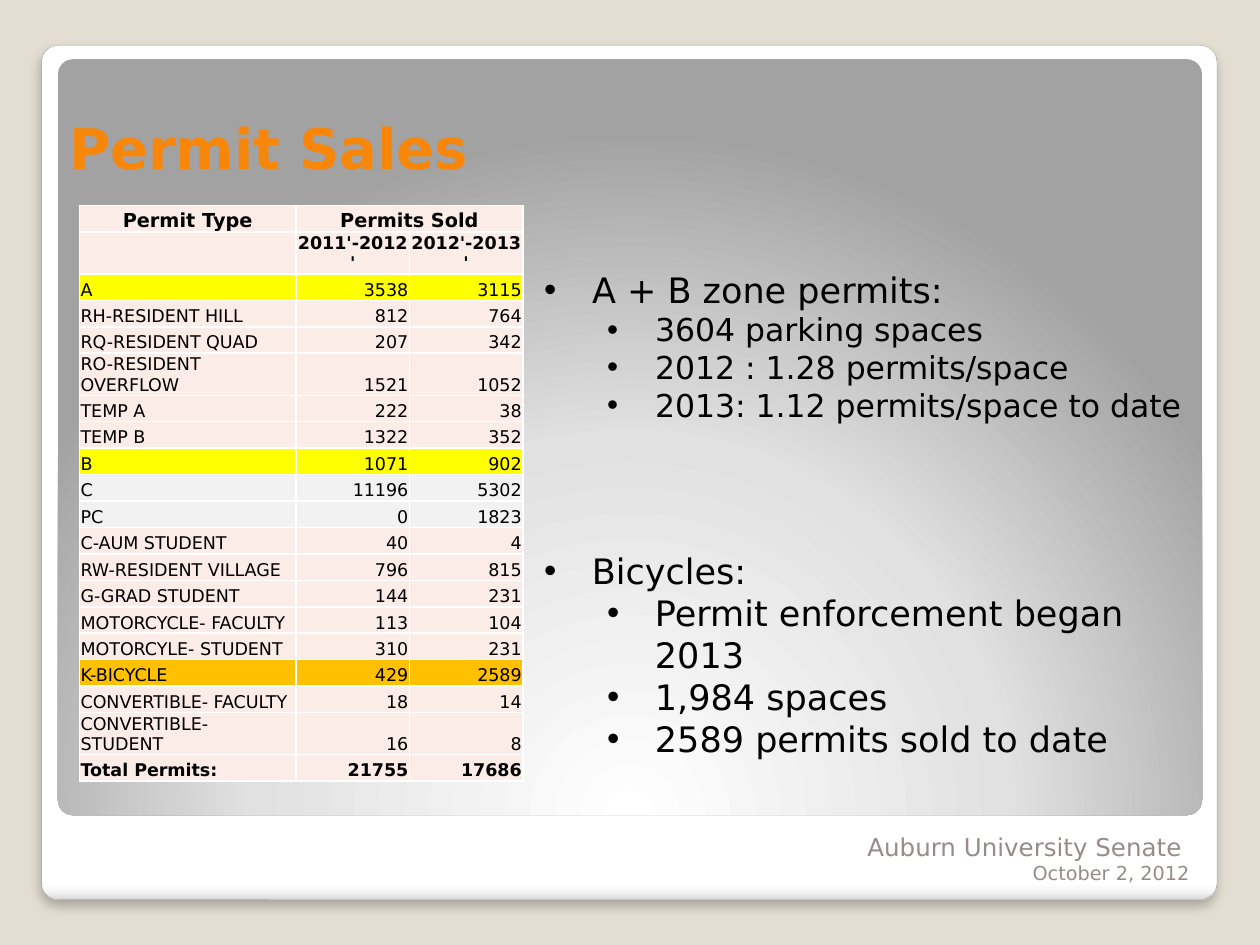
from dataclasses import dataclass

from pptx import Presentation
from pptx.dml.color import RGBColor
from pptx.enum.shapes import MSO_SHAPE
from pptx.enum.text import MSO_ANCHOR, MSO_AUTO_SIZE, PP_ALIGN
from pptx.oxml import parse_xml
from pptx.oxml.ns import nsdecls
from pptx.util import Inches, Pt

LEFT, CENTER, RIGHT = PP_ALIGN.LEFT, PP_ALIGN.CENTER, PP_ALIGN.RIGHT
TOP, BOTTOM = MSO_ANCHOR.TOP, MSO_ANCHOR.BOTTOM
ROUNDED = MSO_SHAPE.ROUNDED_RECTANGLE
GROW = MSO_AUTO_SIZE.SHAPE_TO_FIT_TEXT
FONT = "DejaVu Sans"
COLORS = {
    "page": "E3DED1", "frame": "A4A4A4", "title": "F78609", "footer": "968C8C",
    "text": "000000", "border": "FFFFFF", "plain": "FCECE7", "zone": "FFFF00",
    "commuter": "F2F2F2", "bicycle": "FFC000",
}


@dataclass
class Panel:
    place: tuple
    stops: list
    direction: str


@dataclass
class Line:
    text: str
    size: float
    color: str = "text"
    bold: bool = False
    align: PP_ALIGN = LEFT
    spacing: float = None
    level: int = None  # None means no bullet


@dataclass
class TextBlock:
    place: tuple
    lines: list
    anchor: MSO_ANCHOR = TOP
    grow: bool = False


@dataclass
class PermitRow:
    cells: tuple
    fill: str = "plain"
    size: float = 10
    bold: bool = False
    aligns: tuple = (LEFT, RIGHT, RIGHT)


PANELS = [
    Panel((0.33, 0.36, 9.33, 6.78),
          [(0, "FFFFFF"), (98, "FFFFFF"), (99, "F7F7F7"), (100, "DADADA")],
          '<a:lin ang="5400000" scaled="0"/>'),
    Panel((0.46, 0.47, 9.08, 6), [(0, "FFFFFF"), (55, "E1E1E1"), (100, "A2A2A2")],
          '<a:path path="circle"><a:fillToRect l="50000" t="175000" r="50000" b="-75000"/></a:path>'),
]

TEXT_BLOCKS = [
    TextBlock((5.21, 6.54, 4.33, 0.42),
              [Line("Auburn University Senate ", 14, "footer", align=RIGHT, spacing=18)]),
    TextBlock((6.75, 6.72, 2.79, 0.42),
              [Line("October 2, 2012", 11, "footer", align=RIGHT, spacing=18)]),
    TextBlock((0.45, 0.23, 9, 1.25), [Line("Permit Sales", 32, "title", True)], BOTTOM),
    TextBlock((4.22, 4.31, 5.23, 1.78), [
        Line("Bicycles:", 20, level=0),
        Line("Permit enforcement began 2013", 20, level=1),
        Line("1,984 spaces", 20, level=1),
        Line("2589 permits sold to date", 20, level=1),
    ], grow=True),
    TextBlock((4.22, 2.08, 5.48, 1.35), [
        Line("A + B zone permits:", 20, level=0),
        Line("3604 parking spaces", 18, level=1),
        Line("2012 : 1.28 permits/space", 18, level=1),
        Line("2013: 1.12 permits/space to date", 18, level=1),
    ], grow=True),
]

CENTERED = (CENTER,) * 3
PERMIT_ROWS = [
    PermitRow(("Permit Type", "Permits Sold", ""), size=11, bold=True, aligns=CENTERED),
    PermitRow(("", "2011'-2012'", "2012'-2013'"), bold=True, aligns=CENTERED),
    PermitRow(("A", "3538", "3115"), "zone"),
    PermitRow(("RH-RESIDENT HILL", "812", "764")),
    PermitRow(("RQ-RESIDENT QUAD", "207", "342")),
    PermitRow(("RO-RESIDENT OVERFLOW", "1521", "1052")),
    PermitRow(("TEMP A", "222", "38")),
    PermitRow(("TEMP B", "1322", "352")),
    PermitRow(("B", "1071", "902"), "zone"),
    PermitRow(("C", "11196", "5302"), "commuter"),
    PermitRow(("PC", "0", "1823"), "commuter"),
    PermitRow(("C-AUM STUDENT", "40", "4")),
    PermitRow(("RW-RESIDENT VILLAGE", "796", "815")),
    PermitRow(("G-GRAD STUDENT", "144", "231")),
    PermitRow(("MOTORCYCLE- FACULTY", "113", "104")),
    PermitRow(("MOTORCYLE- STUDENT", "310", "231")),
    PermitRow(("K-BICYCLE", "429", "2589"), "bicycle"),
    PermitRow(("CONVERTIBLE- FACULTY", "18", "14")),
    PermitRow(("CONVERTIBLE- STUDENT", "16", "8")),
    PermitRow(("Total Permits:", "21755", "17686"), bold=True),
]
COLUMN_WIDTHS = (1.72, 0.9, 0.9)
ROW_HEIGHT = 0.21


def rgb(name: str) -> RGBColor:
    return RGBColor.from_string(COLORS[name])


def set_all(target, values: dict) -> None:
    for name, value in values.items():
        setattr(target, name, value)


def element(tag: str, attributes: str = "", inner: str = ""):
    return parse_xml(f'<a:{tag} {nsdecls("a")} {attributes}>{inner}</a:{tag}>')


def add_panel(page, panel: Panel):
    shape = page.shapes.add_shape(ROUNDED, *map(Inches, panel.place))
    shape.adjustments[0] = 0.02
    shape.shadow.inherit = False
    shape.fill.background()
    shape.line.fill.background()
    stops = "".join(f'<a:gs pos="{position * 1000}"><a:srgbClr val="{color}"/></a:gs>'
                    for position, color in panel.stops)
    gradient = element("gradFill", 'rotWithShape="1"', f"<a:gsLst>{stops}</a:gsLst>{panel.direction}")
    properties = shape.element.spPr
    properties.replace(properties.find("{*}noFill"), gradient)
    return shape


def write_line(para, line: Line) -> None:
    para.alignment = line.align
    if line.spacing:
        para.line_spacing = Pt(line.spacing)
    if line.level is not None:
        para.level = line.level
        properties = para._p.get_or_add_pPr()
        properties.set("marL", str(Inches(0.38 + 0.5 * line.level)))
        properties.set("indent", str(-Inches(0.38)))
        properties.append(element("buFont", 'typeface="Arial"'))
        properties.append(element("buChar", 'char="•"'))
    span = para.add_run()
    span.text = line.text
    set_all(span.font, {"name": FONT, "size": Pt(line.size), "bold": line.bold})
    span.font.color.rgb = rgb(line.color)


def add_text(page, block: TextBlock) -> None:
    frame = page.shapes.add_textbox(*map(Inches, block.place)).text_frame
    set_all(frame, {"word_wrap": True, "vertical_anchor": block.anchor})
    if block.grow:
        frame.auto_size = GROW
    for index, line in enumerate(block.lines):
        write_line(frame.add_paragraph() if index else frame.paragraphs[0], line)


def style_cell(cell, fill: str) -> None:
    edge = Inches(0.01)
    set_all(cell, {"vertical_anchor": BOTTOM, "margin_left": edge, "margin_right": edge,
                   "margin_top": edge, "margin_bottom": 0})
    cell.fill.solid()
    cell.fill.fore_color.rgb = rgb(fill)
    paint = f'<a:solidFill><a:srgbClr val="{COLORS["border"]}"/></a:solidFill>'
    for index, side in enumerate(("lnL", "lnR", "lnT", "lnB")):
        cell._tc.get_or_add_tcPr().insert(index, element(side, f'w="{Pt(1)}"', paint))


def add_permit_table(page) -> None:
    size = (sum(COLUMN_WIDTHS), ROW_HEIGHT * len(PERMIT_ROWS))
    table = page.shapes.add_table(len(PERMIT_ROWS), len(COLUMN_WIDTHS),
                                  *map(Inches, (0.63, 1.63, *size))).table
    set_all(table, {"first_row": False, "horz_banding": False})
    for column, width in zip(table.columns, COLUMN_WIDTHS):
        column.width = Inches(width)
    for row_index, row in enumerate(PERMIT_ROWS):
        table.rows[row_index].height = Inches(ROW_HEIGHT)
        for column_index, (text, align) in enumerate(zip(row.cells, row.aligns)):
            cell = table.cell(row_index, column_index)
            style_cell(cell, row.fill)
            if text:
                write_line(cell.text_frame.paragraphs[0],
                           Line(text, row.size, bold=row.bold, align=align))
    table.cell(0, 1).merge(table.cell(0, 2))


def main() -> None:
    deck = Presentation()
    set_all(deck, {"slide_width": Inches(10), "slide_height": Inches(7.5)})
    page = deck.slides.add_slide(deck.slide_layouts[6])
    page.background.fill.solid()
    page.background.fill.fore_color.rgb = rgb("page")

    # White frame with its shadow, then the grey panel
    frame, _ = [add_panel(page, panel) for panel in PANELS]
    frame.line.color.rgb = rgb("frame")
    frame.line.width = Pt(0.16)
    frame.element.spPr.find("{*}effectLst").append(element(
        "outerShdw", f'blurRad="{Pt(6)}" dist="{Pt(4)}" dir="5400000" algn="tl" rotWithShape="0"',
        '<a:srgbClr val="000000"><a:alpha val="25000"/></a:srgbClr>'))

    # Permit sales, then title, footer and bullet lists
    add_permit_table(page)
    for block in TEXT_BLOCKS:
        add_text(page, block)
    deck.save("out.pptx")


if __name__ == "__main__":
    main()
